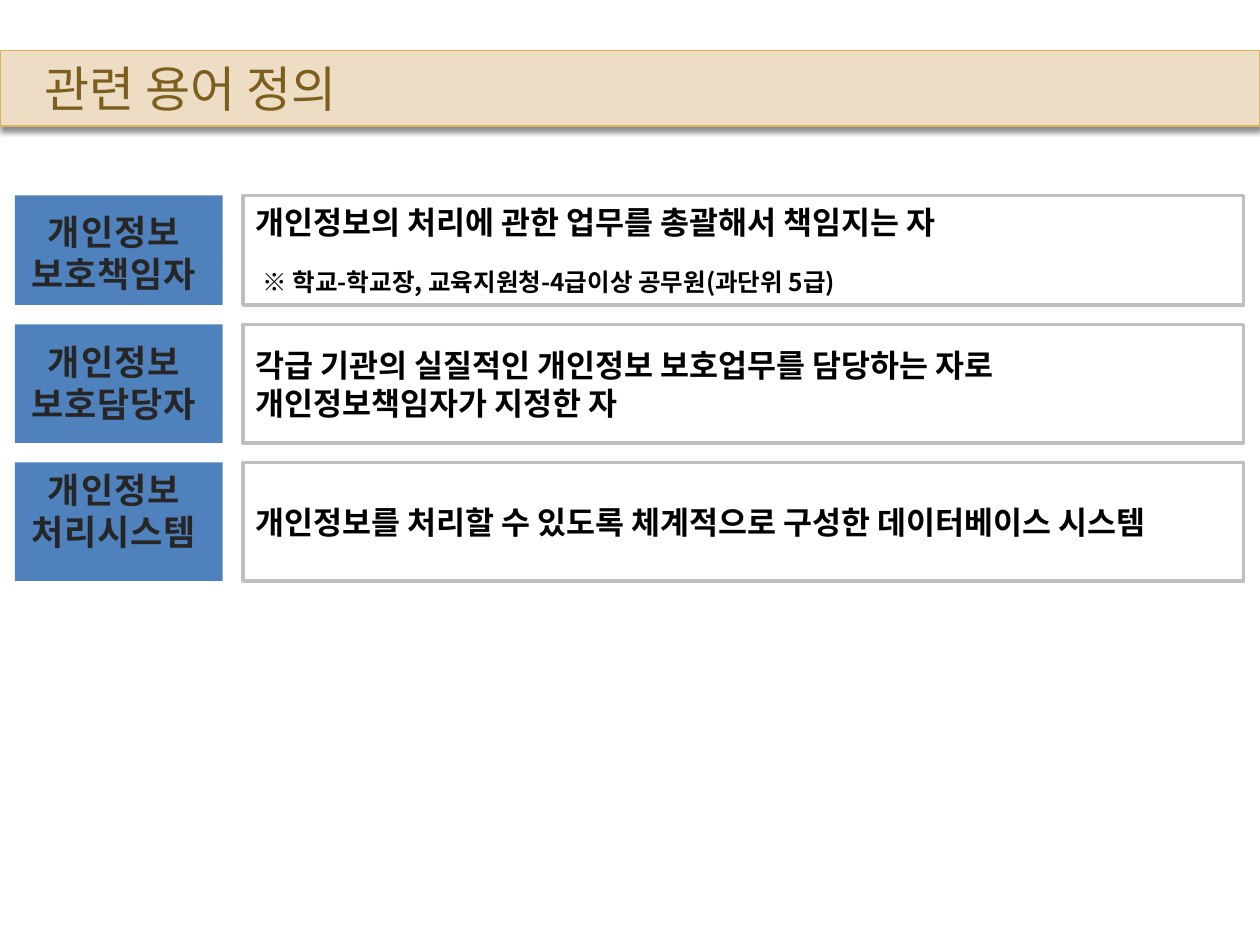
from dataclasses import dataclass

from lxml.etree import SubElement
from pptx import Presentation
from pptx.dml.color import RGBColor
from pptx.enum.shapes import MSO_SHAPE as Preset
from pptx.enum.text import MSO_ANCHOR as Anchor, MSO_AUTO_SIZE as AutoSize, PP_ALIGN as Align
from pptx.oxml.ns import qn
from pptx.util import Cm, Pt

FONT = "Noto Sans CJK KR"
COLORS = {
    "banner": "EDDDC4", "banner_edge": "D8B25C", "title": "7C5F1E",
    "term": "4F81BD", "term_text": "262626",
    "border": "BFBFBF", "text": "000000", "shadow": "000000",
}
FIRST_TOP, ROW_GAP = 3.94, 0.39
TERM_LEFT, TERM_WIDTH = 0.3, 4.19
MEANING_LEFT, MEANING_WIDTH = 4.9, 20.17
LABEL_LEFT, LABEL_WIDTH, LABEL_HEIGHT = 0.1, 4.39, 1.96


@dataclass
class Definition:
    term: tuple[str, str]
    meaning: str
    height: float
    label_offset: float
    note: str = ""


DEFINITIONS = [
    Definition(("개인정보", "보호책임자"), "개인정보의 처리에 관한 업무를 총괄해서 책임지는 자",
               2.21, 0.18, "※ 학교-학교장, 교육지원청-4급이상 공무원(과단위 5급)"),
    Definition(("개인정보", "보호담당자"),
               "각급 기관의 실질적인 개인정보 보호업무를 담당하는 자로 개인정보책임자가 지정한 자",
               2.39, 0.2),
    Definition(("개인정보", "처리시스템"),
               "개인정보를 처리할 수 있도록 체계적으로 구성한 데이터베이스 시스템", 2.39, 0),
]


def rgb(name: str) -> RGBColor:
    return RGBColor.from_string(COLORS[name])


def apply(target, formats: dict) -> None:
    for attribute, value in formats.items():
        setattr(target, attribute, value)


def place(shape, left: float, top: float, width: float, height: float) -> None:
    apply(shape, {"left": Cm(left), "top": Cm(top), "width": Cm(width), "height": Cm(height)})


def add_run(paragraph, text: str, size: int, color: str, bold: bool = True):
    run = paragraph.add_run()
    run.text = text
    apply(run.font, {"name": FONT, "size": Pt(size), "bold": bold})
    run.font.color.rgb = rgb(color)
    SubElement(run.font._element, qn("a:ea"), typeface=FONT)
    return run


def add_box(slide, left: float, top: float, width: float, height: float):
    box = slide.shapes.add_shape(Preset.RECTANGLE, Cm(left), Cm(top), Cm(width), Cm(height))
    box.shadow.inherit = False
    return box


def add_shadow(shape) -> None:
    effects = SubElement(shape._element.spPr, qn("a:effectLst"))
    shadow = SubElement(effects, qn("a:outerShdw"), blurRad=str(Pt(3)), dist=str(Pt(2.4)),
                        dir="5400000", rotWithShape="0")
    color = SubElement(shadow, qn("a:srgbClr"), val=COLORS["shadow"])
    SubElement(color, qn("a:alpha"), val="45000")


def draw_title(slide, text: str) -> None:
    title = slide.shapes.title
    place(title, 0, 1.02, 25.4, 1.52)
    title.fill.solid()
    title.fill.fore_color.rgb = rgb("banner")
    title.line.color.rgb = rgb("banner_edge")
    title.line.width = Pt(0.79)
    add_shadow(title)
    apply(title.text_frame, {"auto_size": AutoSize.NONE, "vertical_anchor": Anchor.MIDDLE,
                             "margin_left": Cm(0.9)})
    paragraph = title.text_frame.paragraphs[0]
    paragraph.alignment = Align.LEFT
    add_run(paragraph, text, 28, "title", bold=False)


def draw_term(slide, entry: Definition, top: float) -> None:
    panel = add_box(slide, TERM_LEFT, top, TERM_WIDTH, entry.height)
    panel.fill.solid()
    panel.fill.fore_color.rgb = rgb("term")
    panel.line.fill.background()

    label = slide.shapes.add_textbox(Cm(LABEL_LEFT), Cm(top + entry.label_offset),
                                     Cm(LABEL_WIDTH), Cm(LABEL_HEIGHT))
    frame = label.text_frame
    apply(frame, {"word_wrap": True, "auto_size": AutoSize.SHAPE_TO_FIT_TEXT})
    for index, line in enumerate(entry.term):
        paragraph = frame.add_paragraph() if index else frame.paragraphs[0]
        paragraph.alignment = Align.CENTER
        run = add_run(paragraph, line, 20, "term_text")
        run.font._element.set("spc", "50")


def draw_meaning(slide, entry: Definition, top: float) -> None:
    box = add_box(slide, MEANING_LEFT, top, MEANING_WIDTH, entry.height)
    box.fill.background()
    box.line.color.rgb = rgb("border")
    box.line.width = Pt(2)
    frame = box.text_frame
    apply(frame, {"word_wrap": True, "vertical_anchor": Anchor.MIDDLE})
    paragraph = frame.paragraphs[0]
    paragraph.alignment = Align.LEFT
    add_run(paragraph, entry.meaning, 18, "text")
    if entry.note:
        note = frame.add_paragraph()
        apply(note, {"alignment": Align.LEFT, "line_spacing": 1.5})
        add_run(note, " ", 18, "text")
        add_run(note, entry.note, 14, "text")


def main() -> None:
    deck = Presentation()
    apply(deck, {"slide_width": Cm(25.4), "slide_height": Cm(19.05)})
    slide = deck.slides.add_slide(deck.slide_layouts.get_by_name("Title Only"))

    # Title banner
    draw_title(slide, "관련 용어 정의")

    # One row for each term and its meaning
    top = FIRST_TOP
    for entry in DEFINITIONS:
        draw_term(slide, entry, top)
        draw_meaning(slide, entry, top)
        top += entry.height + ROW_GAP

    deck.save("out.pptx")


if __name__ == "__main__":
    main()
